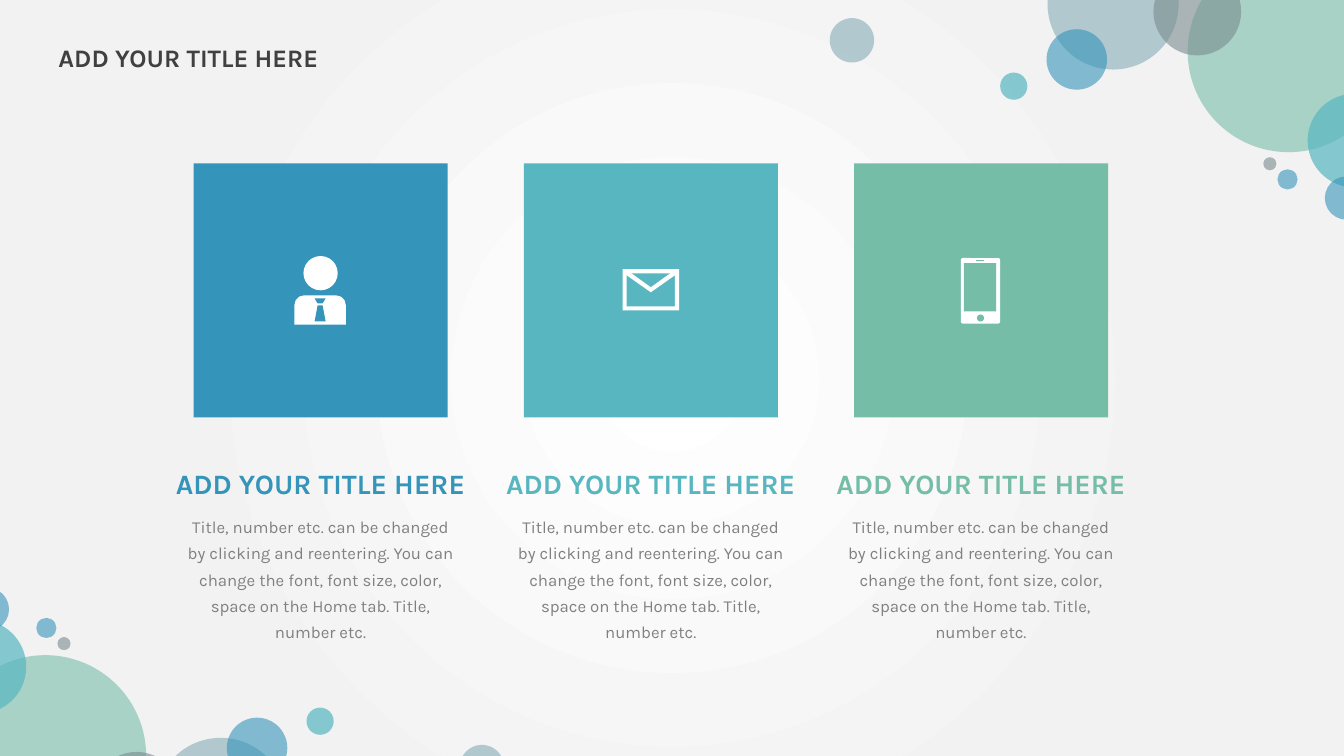
from lxml import etree
from pptx import Presentation
from pptx.dml.color import RGBColor
from pptx.enum.shapes import MSO_SHAPE as Shape
from pptx.enum.text import MSO_ANCHOR, MSO_AUTO_SIZE, PP_ALIGN
from pptx.oxml import parse_xml
from pptx.oxml.ns import nsdecls, qn
from pptx.util import Inches, Pt

FONT = "Karla"
BLUE = RGBColor(0x34, 0x94, 0xBA)
TEAL = RGBColor(0x58, 0xB6, 0xC0)
GREEN = RGBColor(0x75, 0xBD, 0xA7)
MIST = RGBColor(0x84, 0xAC, 0xB6)
SLATE = RGBColor(0x7A, 0x8C, 0x8E)
WHITE = RGBColor(0xFF, 0xFF, 0xFF)
PALE = RGBColor(0xF2, 0xF2, 0xF2)
DARK = RGBColor(0x40, 0x40, 0x40)
GRAY = RGBColor(0x80, 0x80, 0x80)

TITLE = "ADD YOUR TITLE HERE"
DETAIL = ("Title, number etc. can be changed by clicking and reentering. "
          "You can change the font, font size, color, space on the Home tab. "
          "Title, number etc.")

# Top right bubbles: left, top, diameter, colour, opacity in percent
BUBBLES = [
    (10.39, -0.61, 1.3, MIST, 60),
    (11.78, -0.49, 2, GREEN, 60),
    (11.44, -0.32, 0.87, SLATE, 60),
    (10.38, 0.29, 0.6, BLUE, 60),
    (12.97, 0.93, 0.93, TEAL, 70),
    (9.92, 0.72, 0.27, TEAL, 70),
    (13.14, 1.75, 0.43, BLUE, 60),
    (12.67, 1.68, 0.2, BLUE, 60),
    (12.53, 1.56, 0.13, SLATE, 60),
    (8.23, 0.18, 0.44, MIST, 60),
]
# The bottom left bubbles are the same group turned by half a circle
TURN_X, TURN_Y = 13.23, 8.01

# Icon parts are measured from the centre of their tile.
# Preset: shape, left, top, width, height, corner or border ratio, is_cutout
# Outline: None, points, is_cutout
PERSON = [
    (Shape.OVAL, -0.17, -0.34, 0.34, 0.34, None, False),
    (Shape.ROUND_2_SAME_RECTANGLE, -0.26, 0.05, 0.51, 0.29, 0.33, False),
    (None, [(-0.06, 0.08), (0.05, 0.08), (0.02, 0.13), (-0.03, 0.13)], True),
    (None, [(-0.03, 0.15), (0.02, 0.15), (0.05, 0.31), (-0.06, 0.31)], True),
]
ENVELOPE = [
    (Shape.FRAME, -0.28, -0.21, 0.56, 0.41, 0.1, False),
    (None, [(0, 0.02), (-0.27, -0.17), (-0.25, -0.21), (0, -0.03),
            (0.25, -0.21), (0.27, -0.17)], False),
]
PHONE = [
    (Shape.ROUNDED_RECTANGLE, -0.2, -0.32, 0.39, 0.65, 0.05, False),
    (Shape.RECTANGLE, -0.17, -0.27, 0.32, 0.48, None, True),
    (Shape.OVAL, -0.04, 0.24, 0.07, 0.07, None, True),
    (Shape.ROUNDED_RECTANGLE, -0.05, -0.3, 0.08, 0.01, 0.5, True),
]
COLUMNS = [(BLUE, PERSON), (TEAL, ENVELOPE), (GREEN, PHONE)]

TILE_LEFT, TILE_TOP, TILE_SIZE, TILE_STEP = 1.92, 1.62, 2.52, 3.275


def paint(shape, color, opacity=100):
    shape.shadow.inherit = False
    shape.fill.solid()
    shape.fill.fore_color.rgb = color
    shape.line.fill.background()
    if opacity < 100:
        rgb = shape.fill._xPr.find(f".//{qn('a:srgbClr')}")
        etree.SubElement(rgb, qn("a:alpha"), val=str(opacity * 1000))


def add_preset(slide, preset, left, top, width, height, color, opacity=100):
    shape = slide.shapes.add_shape(
        preset, Inches(left), Inches(top), Inches(width), Inches(height))
    paint(shape, color, opacity)
    return shape


def add_outline(slide, points, color):
    corners = [(Inches(x), Inches(y)) for x, y in points]
    builder = slide.shapes.build_freeform(*corners[0])
    builder.add_line_segments(corners[1:], close=True)
    paint(builder.convert_to_shape(), color)


def add_icon(slide, parts, center_x, center_y, tile_color):
    for preset, *geometry, is_cutout in parts:
        color = tile_color if is_cutout else WHITE
        if preset is None:
            points = [(center_x + x, center_y + y) for x, y in geometry[0]]
            add_outline(slide, points, color)
            continue
        left, top, width, height, ratio = geometry
        shape = add_preset(slide, preset, center_x + left, center_y + top,
                           width, height, color)
        if ratio is not None:
            shape.adjustments[0] = ratio


def write(box, text, size, color, bold, align):
    frame = box.text_frame
    frame.text = text
    frame.word_wrap = True
    frame.auto_size = MSO_AUTO_SIZE.NONE
    frame.vertical_anchor = MSO_ANCHOR.TOP
    paragraph = frame.paragraphs[0]
    paragraph.alignment = align
    paragraph.line_spacing = 1.3
    paragraph.space_before = Pt(0)
    font = paragraph.runs[0].font
    font.name, font.size, font.bold = FONT, Pt(size), bold
    font.color.rgb = color


def add_centered_text(slide, center_x, top, width, height, *style):
    box = slide.shapes.add_textbox(
        Inches(center_x - width / 2), Inches(top), Inches(width), Inches(height))
    write(box, *style, PP_ALIGN.CENTER)


def set_radial_background(slide):
    fill = slide.background.fill
    fill.gradient()
    for stop, color, position in zip(fill.gradient_stops, (WHITE, PALE), (0, 0.67)):
        stop.color.rgb = color
        stop.position = position
    linear = slide.element.find(f".//{qn('a:lin')}")
    linear.getparent().replace(linear, parse_xml(
        f'<a:path {nsdecls("a")} path="circle">'
        '<a:fillToRect l="50000" t="50000" r="50000" b="50000"/></a:path>'))


def main():
    deck = Presentation()
    deck.slide_width, deck.slide_height = Inches(13.33), Inches(7.5)
    slide = deck.slides.add_slide(deck.slide_layouts[5])
    set_radial_background(slide)

    turned = [(TURN_X - left - size, TURN_Y - top - size, size, color, opacity)
              for left, top, size, color, opacity in BUBBLES]
    for left, top, size, color, opacity in BUBBLES + turned:
        add_preset(slide, Shape.OVAL, left, top, size, size, color, opacity)

    title = slide.shapes.title
    title.left, title.top = Inches(0.48), Inches(0.28)
    title.width, title.height = Inches(3.72), Inches(0.44)
    write(title, TITLE, 18, DARK, True, PP_ALIGN.LEFT)

    for index, (color, icon) in enumerate(COLUMNS):
        left = TILE_LEFT + index * TILE_STEP
        center_x, center_y = left + TILE_SIZE / 2, TILE_TOP + TILE_SIZE / 2
        add_preset(slide, Shape.RECTANGLE, left, TILE_TOP, TILE_SIZE, TILE_SIZE, color)
        add_icon(slide, icon, center_x, center_y, color)
        add_centered_text(slide, center_x, 4.48, 3.2, 0.65, TITLE, 20, color, True)
        add_centered_text(slide, center_x, 5.02, 2.86, 1.21, DETAIL, 12, GRAY, False)

    deck.save("out.pptx")


if __name__ == "__main__":
    main()
